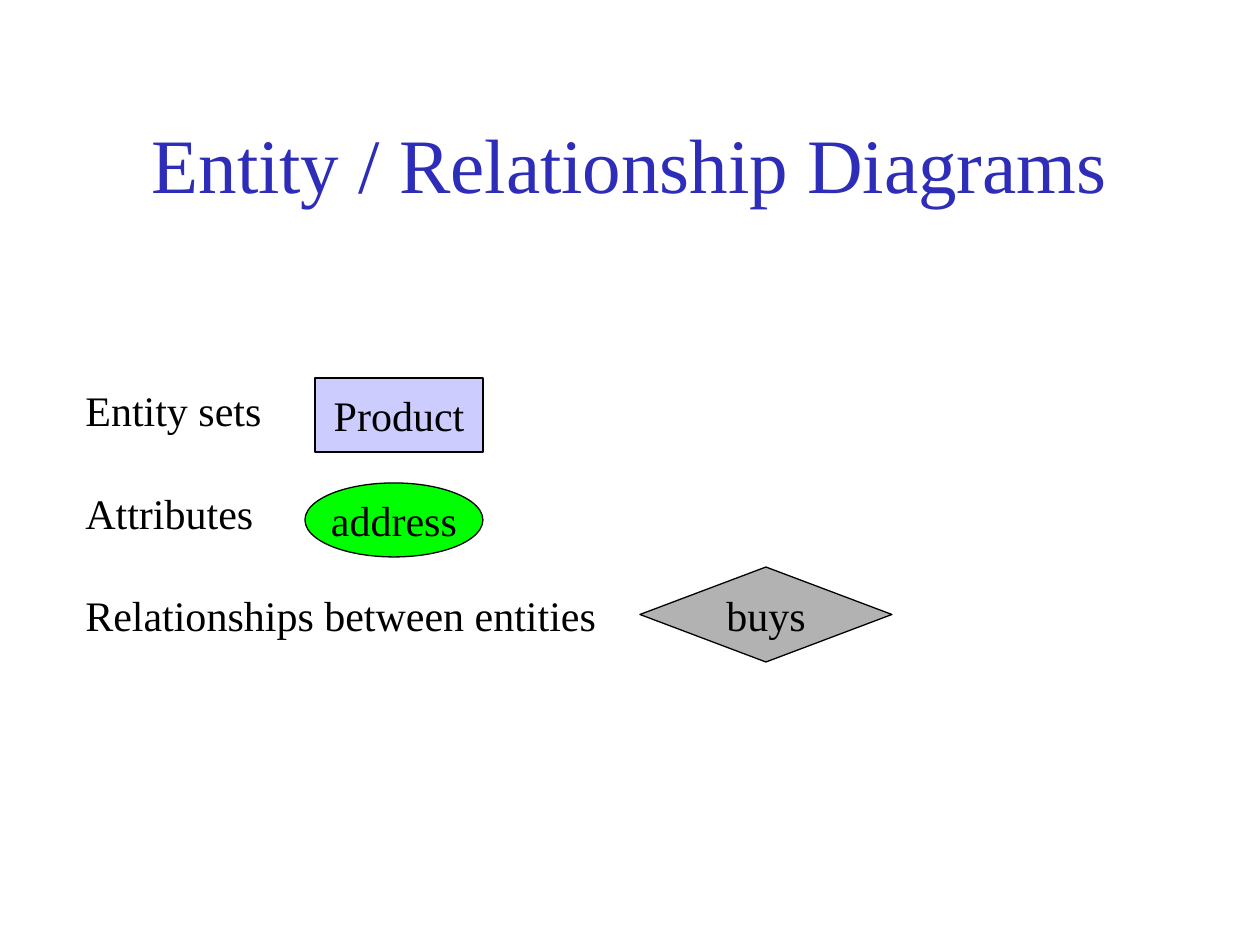
from dataclasses import dataclass

from pptx import Presentation
from pptx.dml.color import RGBColor
from pptx.enum import shapes, text
from pptx.util import Emu, Pt

PX = 914400 // 126
FONT = "Times New Roman"
BLACK = "000000"


@dataclass
class Symbol:
    kind: shapes.MSO_SHAPE
    label: str
    fill: str
    left: int
    top: int
    width: int
    height: int


SYMBOLS = [
    Symbol(shapes.MSO_SHAPE.RECTANGLE, "Product", "CCCCFF", 315, 378, 168, 74),
    Symbol(shapes.MSO_SHAPE.OVAL, "address", "00FF00", 305, 483, 178, 74),
    Symbol(shapes.MSO_SHAPE.DIAMOND, "buys", "B2B2B2", 640, 567, 252, 95),
]
TERMS = ["Entity sets", "Attributes", "Relationships between entities"]


def px(*lengths: int) -> list[Emu]:
    return [Emu(n * PX) for n in lengths]


def rgb(value: str) -> RGBColor:
    return RGBColor.from_string(value)


def style(p, size: int, color: str, align: text.PP_ALIGN) -> None:
    p.alignment = align
    for r in p.runs:
        r.font.name = FONT
        r.font.size = Pt(size)
        r.font.color.rgb = rgb(color)


def add_title(slide, title: str) -> None:
    sp = slide.shapes.title
    sp.left, sp.top, sp.width, sp.height = px(95, 84, 1070, 158)
    tf = sp.text_frame
    tf.text = title
    tf.vertical_anchor = text.MSO_ANCHOR.MIDDLE
    style(tf.paragraphs[0], 44, "2D2DB9", text.PP_ALIGN.CENTER)


def add_terms(slide, terms: list[str]) -> None:
    tf = slide.shapes.add_textbox(*px(73, 378, 541, 369)).text_frame
    tf.word_wrap = False
    tf.text = "\n".join(terms)
    for i, p in enumerate(tf.paragraphs):
        p.space_before = Pt(30 if i else 0)
        style(p, 24, BLACK, text.PP_ALIGN.LEFT)


def add_symbol(slide, symbol: Symbol) -> None:
    sp = slide.shapes.add_shape(
        symbol.kind, *px(symbol.left, symbol.top, symbol.width, symbol.height)
    )
    sp.shadow.inherit = False
    sp.fill.solid()
    sp.fill.fore_color.rgb = rgb(symbol.fill)
    sp.line.color.rgb = rgb(BLACK)
    sp.line.width = Pt(0.75)
    tf = sp.text_frame
    tf.word_wrap = False
    tf.vertical_anchor = text.MSO_ANCHOR.MIDDLE
    tf.text = symbol.label
    style(tf.paragraphs[0], 24, BLACK, text.PP_ALIGN.CENTER)


def main() -> None:
    prs = Presentation()
    prs.slide_width, prs.slide_height = px(1260, 945)
    slide = prs.slides.add_slide(prs.slide_layouts[5])
    add_title(slide, "Entity / Relationship Diagrams")
    add_terms(slide, TERMS)
    for symbol in SYMBOLS:
        add_symbol(slide, symbol)
    prs.save("out.pptx")


if __name__ == "__main__":
    main()
